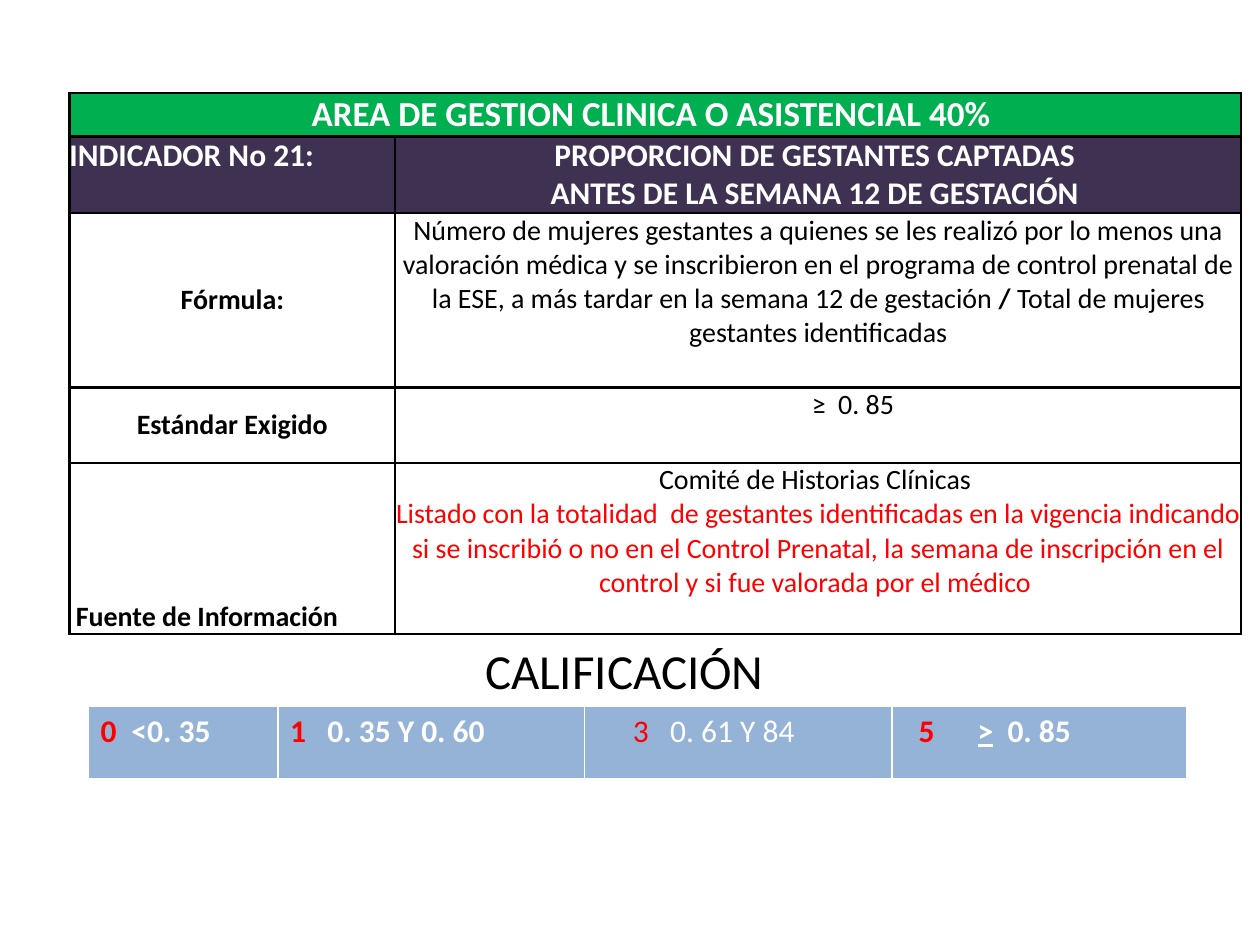
from lxml.etree import SubElement
from pptx import Presentation
from pptx.dml.color import RGBColor
from pptx.enum.text import MSO_ANCHOR as Anchor, PP_ALIGN as Align
from pptx.oxml.ns import qn
from pptx.util import Cm, Pt


def write(paragraph, text, size=16, color="000000", bold=False, underline=False, align=None):
    run = paragraph.add_run()
    run.text = text
    run.font.name = "Calibri"
    run.font.size = Pt(size)
    run.font.bold = bold
    run.font.underline = underline
    run.font.color.rgb = RGBColor.from_string(color)
    if align is not None:
        paragraph.alignment = align


def style_cell(cell, fill, line, widths, margins):
    properties = cell._tc.get_or_add_tcPr()
    for side, width in zip("LRTB", widths):
        edge = SubElement(properties, qn(f"a:ln{side}"), w=str(Pt(width)))
        paint = SubElement(edge, qn("a:solidFill"))
        SubElement(paint, qn("a:srgbClr"), val=line)
    if fill:
        cell.fill.solid()
        cell.fill.fore_color.rgb = RGBColor.from_string(fill)
    else:
        cell.fill.background()
    cell.margin_left, cell.margin_right, cell.margin_top, cell.margin_bottom = map(Cm, margins)


deck = Presentation()
deck.slide_width, deck.slide_height = Cm(25.4), Cm(19.05)
slide = deck.slides.add_slide(deck.slide_layouts[6])

GREEN, PURPLE, BLUE = "00B050", "3F3151", "95B3D7"
WHITE, BLACK, RED = "FFFFFF", "000000", "FF0000"
heading = dict(size=18, color=WHITE, bold=True)

indicator_rows = [
    (0.87, GREEN, Anchor.MIDDLE, Align.CENTER, dict(heading, size=20),
     "AREA DE GESTION CLINICA O ASISTENCIAL 40% ", []),
    (1.55, PURPLE, Anchor.TOP, Align.LEFT, heading, "INDICADOR No 21:",
     [[("PROPORCION DE GESTANTES CAPTADAS ", heading)],
      [("ANTES DE LA SEMANA 12 DE GESTACIÓN ", heading)]]),
    (3.51, None, Anchor.MIDDLE, Align.CENTER, dict(bold=True), "Fórmula:",
     [[("Número de mujeres gestantes a quienes se les realizó por lo menos una "
        "valoración médica y se inscribieron en el programa de control prenatal de "
        "la ESE, a más tardar en la semana 12 de gestación ", {}),
       ("/ ", dict(bold=True)),
       ("Total de mujeres gestantes identificadas", {})]]),
    (1.52, None, Anchor.MIDDLE, Align.CENTER, dict(bold=True), "Estándar Exigido",
     [[("≥  0. 85", {})]]),
    (3.45, None, Anchor.BOTTOM, Align.LEFT, dict(bold=True), "Fuente de Información",
     [[("Comité de Historias Clínicas ", {})],
      [("Listado con la totalidad  de gestantes identificadas en la vigencia indicando "
        "si se inscribió o no en el Control Prenatal, la semana de inscripción en el "
        "control y si fue valorada por el médico ", dict(color=RED))]]),
]

indicator = slide.shapes.add_table(
    len(indicator_rows), 2, Cm(1.4), Cm(1.88), Cm(23.62), Cm(10.9)).table
indicator.first_row = indicator.horz_banding = False
for column, width in zip(indicator.columns, (6.57, 17.05)):
    column.width = Cm(width)

for index, (height, fill, anchor, align, label_format, label, details) in enumerate(indicator_rows):
    indicator.rows[index].height = Cm(height)
    label_cell, detail_cell = indicator.cell(index, 0), indicator.cell(index, 1)
    for cell in (label_cell, detail_cell):
        style_cell(cell, fill, BLACK, [1.5] * 4, [0] * 4)
    label_cell.vertical_anchor = anchor
    write(label_cell.text_frame.paragraphs[0], label, align=align, **label_format)
    for number, runs in enumerate(details):
        frame = detail_cell.text_frame
        paragraph = frame.add_paragraph() if number else frame.paragraphs[0]
        for text, text_format in runs:
            write(paragraph, text, align=Align.CENTER, **text_format)

indicator.cell(0, 0).merge(indicator.cell(0, 1))
indicator.cell(3, 1).margin_left = Cm(1.4)
indicator.cell(4, 0).margin_left = Cm(0.13)

rating_title = slide.shapes.add_textbox(Cm(9.5), Cm(12.78), Cm(6.17), Cm(1.45)).text_frame
rating_title.word_wrap = False
write(rating_title.paragraphs[0], "CALIFICACIÓN", size=28, align=Align.CENTER)

ratings = [
    (3.82, 0.25, [0.62], "0", [("\t<0. 35", False)], True),
    (6.18, 0.25, [0.75], "1", [("\t0. 35 Y 0. 60", False)], True),
    (6.2, 0.98, [0.75], "3", [("\t0. 61 Y 84", False)], False),
    (5.95, 0.54, [1.19, 1.79], "5", [("\t", False), (">", True), ("\t0. 85", False)], True),
]
scale = slide.shapes.add_table(1, len(ratings), Cm(1.78), Cm(14.23), Cm(22.15), Cm(1.5)).table
scale.first_row = scale.horz_banding = False
scale.rows[0].height = Cm(1.5)

for index, (width, indent, stops, score, interval, bold) in enumerate(ratings):
    scale.columns[index].width = Cm(width)
    cell = scale.cell(0, index)
    style_cell(cell, BLUE, WHITE, (1, 1, 1, 3), (indent, 0.25, 0.13, 0.13))
    paragraph = cell.text_frame.paragraphs[0]
    tabs = SubElement(paragraph._p.get_or_add_pPr(), qn("a:tabLst"))
    for stop in stops:
        SubElement(tabs, qn("a:tab"), pos=str(Cm(stop)), algn="l")
    write(paragraph, score, size=18, color=RED, bold=bold)
    for text, underline in interval:
        write(paragraph, text, size=18, color=WHITE, bold=bold, underline=underline)

deck.save("out.pptx")
